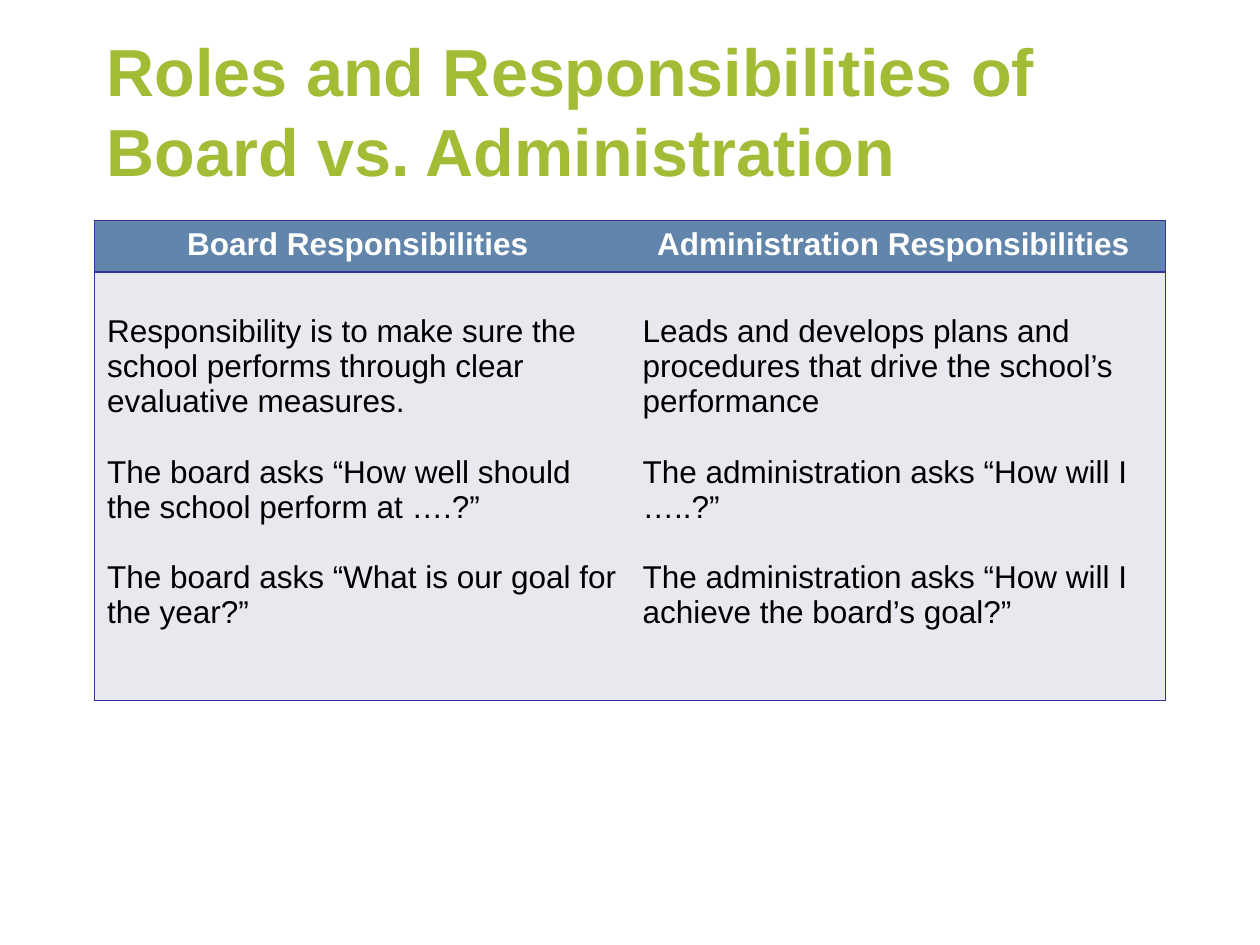
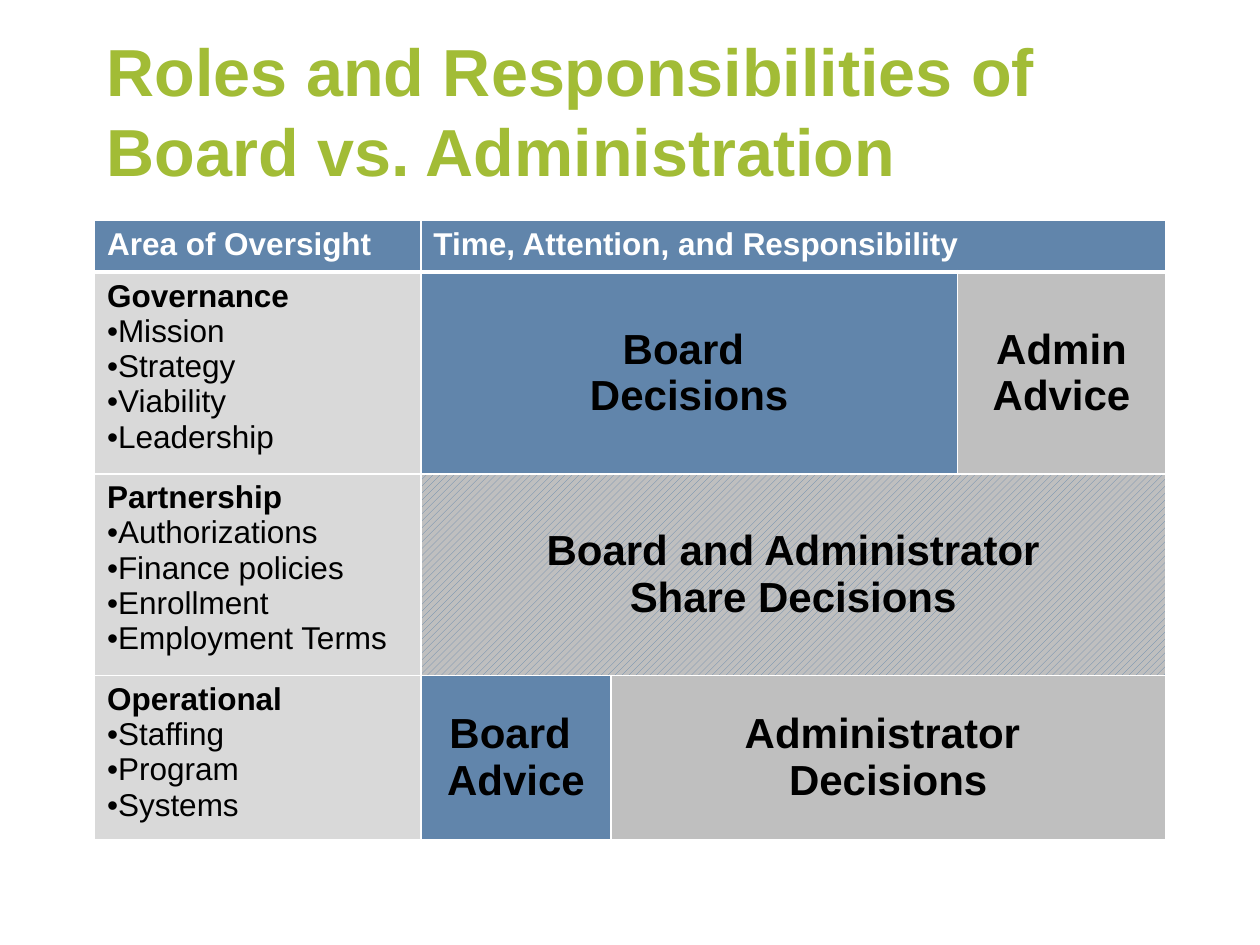
from lxml import etree
from pptx import Presentation, util as u
from pptx.dml.color import RGBColor
from pptx.enum import dml, text
from pptx.oxml.ns import qn

PX = 9144  # one px is 1/100 inch
FONT = "Arial"
PLAIN_STYLE = "{2D5ABB26-0587-4C30-8999-92F81FD0307C}"
COLORS = {
    "title": "A2BC36", "board": "6185AB", "admin": "BFBFBF",
    "area": "D9D9D9", "body": "E8E8EF", "edge": "333399",
    "white": "FFFFFF", "black": "000000",
}
TITLE = "Roles and Responsibilities of Board vs. Administration"


def rgb(name):
    return RGBColor.from_string(COLORS[name])


def write(tf, lines, size=18, color="black", bold=False, center=False,
          gap=0, listed=False):
    """One paragraph per line; a listed text has a bold heading, then bullets."""
    for i, line in enumerate(lines.split("\n")):
        p = tf.paragraphs[0] if i == 0 else tf.add_paragraph()
        if listed and i:
            pPr = p._p.get_or_add_pPr()
            pPr.set("marL", "0")
            pPr.set("indent", "0")
            etree.SubElement(pPr, qn("a:buFont")).set("typeface", FONT)
            etree.SubElement(pPr, qn("a:buChar")).set("char", "•")
        p.alignment = text.PP_ALIGN.CENTER if center else text.PP_ALIGN.LEFT
        if i and gap:
            p.space_before = u.Pt(gap)
        r = p.add_run()
        r.text = line
        r.font.name, r.font.size = FONT, u.Pt(size)
        r.font.bold = bold or (listed and i == 0)
        r.font.color.rgb = rgb(color)


class Deck:
    def __init__(self):
        self.prs = Presentation()
        self.prs.slide_width, self.prs.slide_height = 1000 * PX, 750 * PX
        self.s = None

    def slide(self, title):
        self.s = self.prs.slides.add_slide(self.prs.slide_layouts[6])
        tf = self.s.shapes.add_textbox(75 * PX, 33 * PX, 850 * PX, 108 * PX).text_frame
        tf.word_wrap = True
        tf.vertical_anchor = text.MSO_ANCHOR.MIDDLE
        write(tf, title, size=38, color="title", bold=True)

    def table(self, widths, heights):
        frame = self.s.shapes.add_table(len(heights), len(widths), 75 * PX, 175 * PX,
                                        sum(widths) * PX, sum(heights) * PX)
        tbl = frame.table
        tbl.first_row = tbl.horz_banding = False
        tbl._tbl.tblPr.find(qn("a:tableStyleId")).text = PLAIN_STYLE
        for col, w in zip(tbl.columns, widths):
            col.width = w * PX
        for row, h in zip(tbl.rows, heights):
            row.height = h * PX
        return tbl

    def borders(self, cell, color, **points):
        """Widths in points by side: L, R, T, B."""
        tcPr = cell._tc.get_or_add_tcPr()
        for side in "LRTB":
            if side in points:
                ln = etree.SubElement(tcPr, qn(f"a:ln{side}"), w=str(u.Pt(points[side])))
                fill = etree.SubElement(ln, qn("a:solidFill"))
                etree.SubElement(fill, qn("a:srgbClr"), val=COLORS[color])

    def cell(self, cell, lines, fill, back=None, top=5, middle=False, **fmt):
        """A second fill colour makes diagonal stripes."""
        if back:
            cell.fill.patterned()
            cell.fill.pattern = dml.MSO_PATTERN.WIDE_UPWARD_DIAGONAL
            cell.fill.fore_color.rgb, cell.fill.back_color.rgb = rgb(fill), rgb(back)
        else:
            cell.fill.solid()
            cell.fill.fore_color.rgb = rgb(fill)
        cell.margin_left = cell.margin_right = 10 * PX
        cell.margin_top, cell.margin_bottom = top * PX, 5 * PX
        cell.vertical_anchor = text.MSO_ANCHOR.MIDDLE if middle else text.MSO_ANCHOR.TOP
        write(cell.text_frame, lines, **fmt)

    def header(self, cell, label, **fmt):
        self.cell(cell, label, "board", color="white", bold=True, **fmt)


def responsibilities(d):
    d.slide(TITLE)
    columns = [
        ("Board Responsibilities ",
         "Responsibility is to make sure the school performs through clear evaluative measures.\n"
         "The board asks “How well should the school perform at ….?”\n"
         "The board asks “What is our goal for the year?”"),
        ("Administration Responsibilities ",
         "Leads and develops plans and procedures that drive the school’s performance\n"
         "The administration asks “How will I …..?”\n"
         "The administration asks “How will I achieve the board’s goal?”"),
    ]
    tbl = d.table([425, 425], [41, 340])
    for c, (label, body) in enumerate(columns):
        for r in range(2):
            d.borders(tbl.cell(r, c), "edge", T=1, B=1, **{"LR"[c]: 1})
        d.header(tbl.cell(0, c), label, center=True)
        d.cell(tbl.cell(1, c), body, "body", top=33, gap=20)


def oversight(d):
    d.slide(TITLE)
    tbl = d.table([259, 151, 275, 165], [41, 160, 160, 130])
    for r in range(4):
        for c in range(4):
            d.borders(tbl.cell(r, c), "white", L=1, R=1,
                      T=3 if r == 1 else 1, B=3 if r == 0 else 1)

    # Header row
    tbl.cell(0, 1).merge(tbl.cell(0, 3))
    d.header(tbl.cell(0, 0), "Area of Oversight")
    d.header(tbl.cell(0, 1), "Time, Attention, and Responsibility")

    # Areas
    areas = [
        "Governance\nMission\nStrategy\nViability\nLeadership",
        "Partnership\nAuthorizations\nFinance policies\nEnrollment\nEmployment Terms",
        "Operational\nStaffing\nProgram\nSystems",
    ]
    for r, area in enumerate(areas, 1):
        d.cell(tbl.cell(r, 0), area, "area", listed=True)

    # Who decides: row, first column, last column, text, fill colours
    shares = [
        (1, 1, 2, "Board \nDecisions", "board", None),
        (1, 3, 3, "Admin\nAdvice", "admin", None),
        (2, 1, 3, "Board and Administrator\nShare Decisions", "board", "admin"),
        (3, 1, 1, "Board \nAdvice", "board", None),
        (3, 2, 3, "Administrator \nDecisions", "admin", None),
    ]
    for r, first, last, label, fill, back in shares:
        if last > first:
            tbl.cell(r, first).merge(tbl.cell(r, last))
        d.cell(tbl.cell(r, first), label, fill, back, middle=True,
               size=24, bold=True, center=True)


def main():
    d = Deck()
    responsibilities(d)
    oversight(d)
    d.prs.save("out.pptx")


if __name__ == "__main__":
    main()
